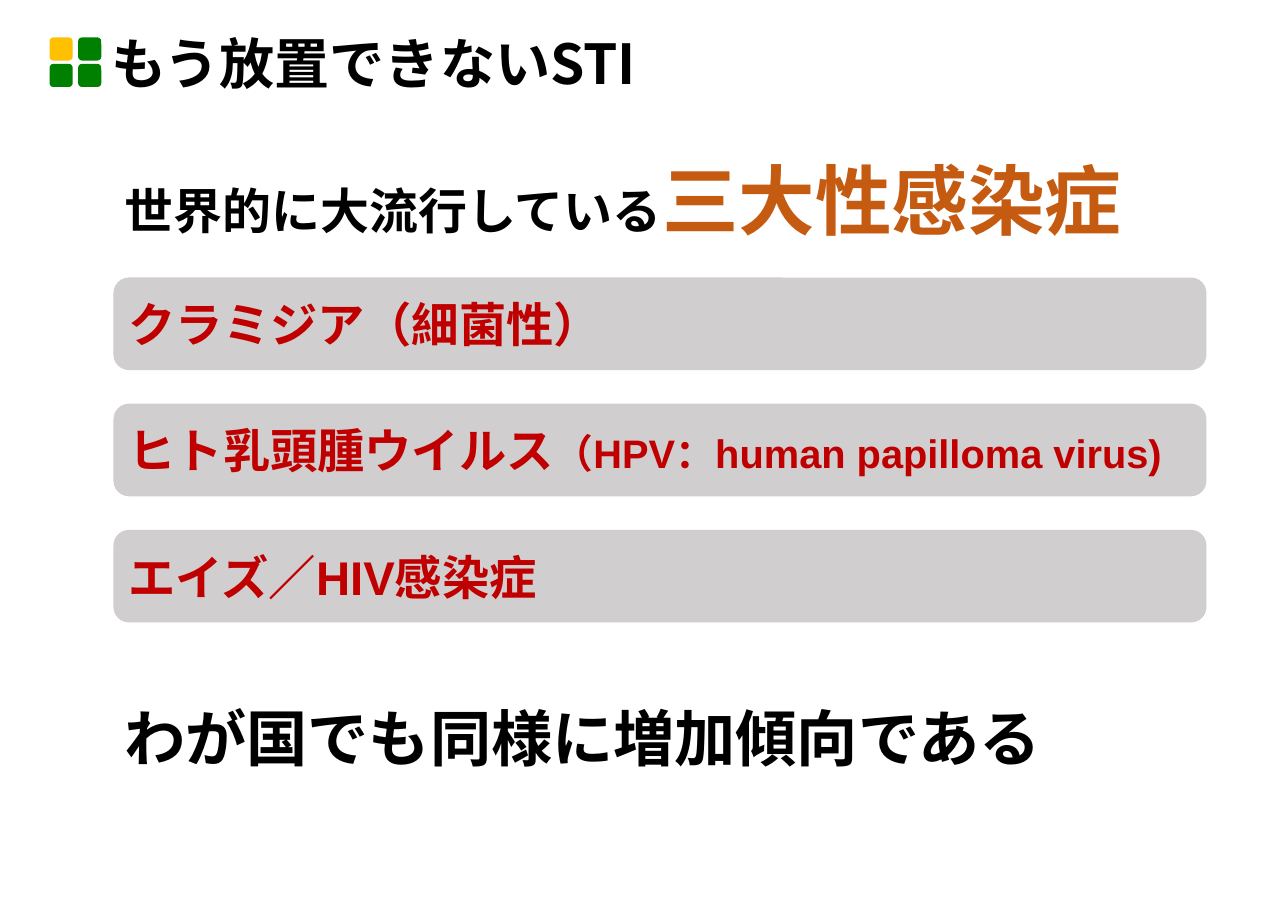
from lxml import etree
from pptx import Presentation
from pptx.dml.color import RGBColor
from pptx.enum.shapes import MSO_SHAPE
from pptx.enum.text import MSO_ANCHOR, MSO_AUTO_SIZE, PP_ALIGN
from pptx.oxml.ns import qn
from pptx.util import Inches, Pt

ROUNDED = MSO_SHAPE.ROUNDED_RECTANGLE
MIDDLE, TOP = MSO_ANCHOR.MIDDLE, MSO_ANCHOR.TOP
NO_FIT = MSO_AUTO_SIZE.NONE
LEFT = PP_ALIGN.LEFT

COLORS = {"black": "000000", "red": "C00000", "orange": "C55A11",
          "band": "D0CECE", "yellow": "FFC000", "green": "008000"}
LATIN, JAPANESE = "Arial", "Noto Sans CJK JP"
TITLE_ONLY = 5


def rgb(name):
    return RGBColor.from_string(COLORS[name])


class Deck:
    """Slide builder; every box is (left, top, width, height) in % of the slide."""

    def __init__(self, width, height):
        self.prs = Presentation()
        self.prs.slide_width, self.prs.slide_height = Inches(width), Inches(height)
        self.s = self.prs.slides.add_slide(self.prs.slide_layouts[TITLE_ONLY])

    def place(self, box):
        w, h = self.prs.slide_width, self.prs.slide_height
        return [round(share * side / 100) for share, side in zip(box, (w, h, w, h))]

    def set_text(self, sp, runs, anchor, latin=LATIN, line=None, before=0):
        """Fill a shape with one bold paragraph of (text, size, colour) runs."""
        tf = sp.text_frame
        tf.word_wrap, tf.auto_size, tf.vertical_anchor = True, NO_FIT, anchor
        p = tf.paragraphs[0]
        p.alignment, p.line_spacing, p.space_before = LEFT, line, Pt(before)
        p.font.name, p.font.bold = latin, True
        for text, size, color in runs:
            r = p.add_run()
            r.text = text
            r.font.size = Pt(size)
            r.font.color.rgb = rgb(color)
            ea = etree.SubElement(r.font._element, qn("a:ea"))
            ea.set("typeface", JAPANESE)
        return p

    def title(self, text, box):
        sp = self.s.shapes.title
        sp.left, sp.top, sp.width, sp.height = self.place(box)
        self.set_text(sp, [(text, 36, "black")], MIDDLE, latin=JAPANESE, line=0.9)

    def text(self, runs, box, before):
        sp = self.s.shapes.add_textbox(*self.place(box))
        self.set_text(sp, runs, TOP, line=0.8, before=before)

    def rounded(self, box, color):
        sp = self.s.shapes.add_shape(ROUNDED, *self.place(box))
        sp.shadow.inherit = False
        sp.fill.solid()
        sp.fill.fore_color.rgb = rgb(color)
        sp.line.fill.background()
        return sp

    def band(self, runs, box):
        sp = self.rounded(box, "band")
        sp.text_frame.margin_right = 0
        p = self.set_text(sp, runs, MIDDLE)
        pPr = p._p.get_or_add_pPr()
        pPr.set("marL", str(Inches(0.28)))
        pPr.set("indent", str(-Inches(0.28)))


def main():
    deck = Deck(11.69, 8.27)
    left, width = 8.81, 84.86

    for i, color in enumerate(["yellow", "green", "green", "green"]):
        row, col = divmod(i, 2)
        deck.rounded((3.85 + 2.22 * col, 4.11 + 2.9 * row, 1.8, 2.54), color)
    deck.title("もう放置できないSTI", (7.78, 3.26, width, 8.22))

    deck.text([("世界的に大流行している", 32, "black"),
               ("三大性感染症", 50, "orange")], (left, 18.14, 88.37, 9.67), before=10)

    infections = [
        [("クラミジア（細菌性）", 30.9, "red")],
        [("ヒト乳頭腫ウイルス", 30.9, "red"),
         ("（HPV：human papilloma virus)", 26, "red")],
        [("エイズ／HIV感染症", 30.9, "red")],
    ]
    for i, runs in enumerate(infections):
        deck.band(runs, (left, 30.47 + 13.85 * i, width, 10.16))

    deck.text([("わが国でも同様に増加傾向である", 40, "black")],
              (left, 77.87, width, 7.98), before=8)
    deck.prs.save("out.pptx")


if __name__ == "__main__":
    main()
